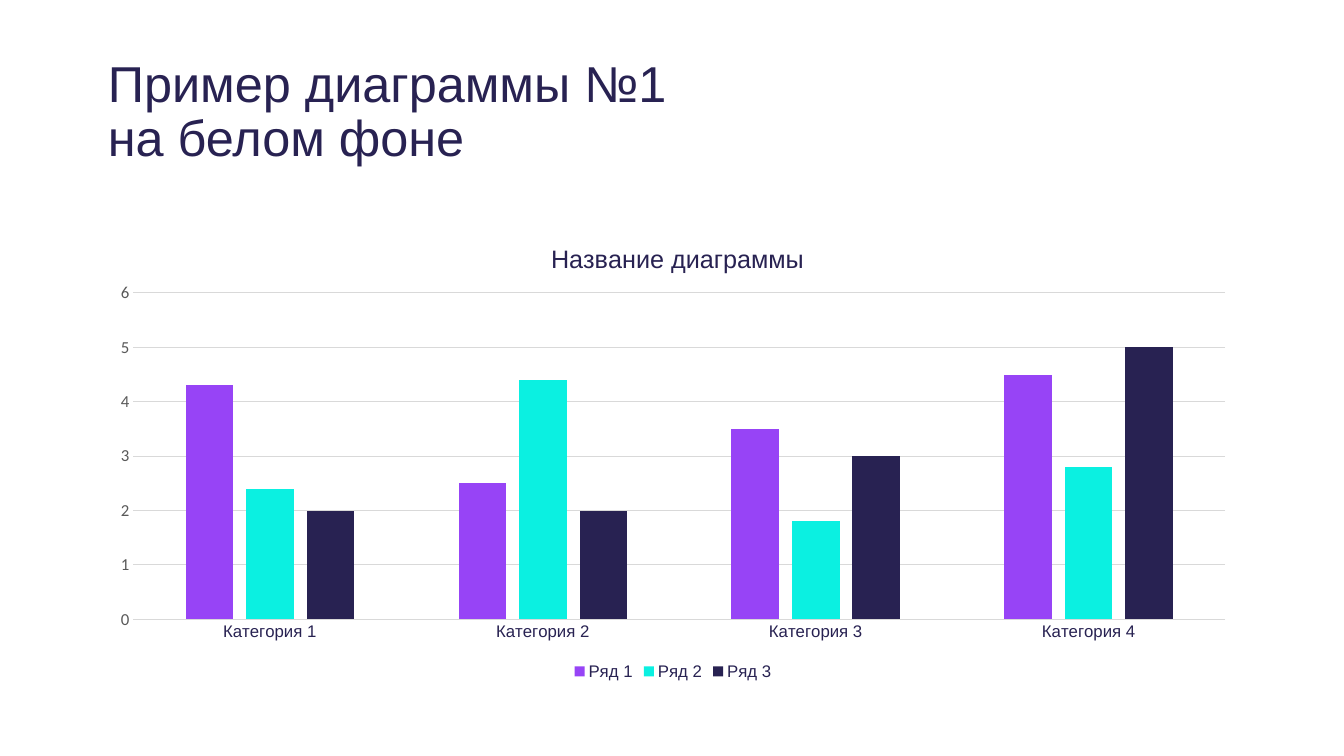
from lxml.etree import SubElement
from pptx import Presentation
from pptx.chart.data import CategoryChartData
from pptx.dml.color import RGBColor
from pptx.enum.chart import XL_CHART_TYPE as ChartType, XL_LEGEND_POSITION as LegendPosition
from pptx.enum.chart import XL_TICK_MARK as TickMark
from pptx.enum.text import MSO_ANCHOR as Anchor, PP_ALIGN as Align
from pptx.oxml.ns import qn
from pptx.util import Inches, Pt

TITLE = "Пример диаграммы №1\nна белом фоне"
CHART_TITLE = "Название диаграммы"
CATEGORIES = ["Категория 1", "Категория 2", "Категория 3", "Категория 4"]
SERIES = [
    ("Ряд 1", (4.3, 2.5, 3.5, 4.5), "9744F6"),
    ("Ряд 2", (2.4, 4.4, 1.8, 2.8), "0BF0E1"),
    ("Ряд 3", (2, 2, 3, 5), "282252"),
]
INK, GREY, RULE = "282252", "595959", "D9D9D9"
LEFT, WIDTH = 0.97, 11.41
TITLE_BOX = (LEFT, 0.4, WIDTH, 1.45)
CHART_BOX = (LEFT, 2.15, WIDTH, 4.64)
TITLE_PLACE = {"x": 0.39, "y": 0.045}
PLOT_PLACE = {"x": 0.031, "y": 0.163, "w": 0.949, "h": 0.698}


def color(value):
    return RGBColor.from_string(value)


def set_all(target, values):
    for name, value in values.items():
        setattr(target, name, value)


def set_font(font, size, ink=INK, name="Arial"):
    set_all(font, {"size": Pt(size), "name": name, "bold": False})
    font.color.rgb = color(ink)


def set_line(line, ink):
    line.width = Pt(0.75)
    line.color.rgb = color(ink)


def place(parent, index, fractions, inner=False):
    for old in parent.findall(qn("c:layout")):
        parent.remove(old)
    layout = SubElement(parent, qn("c:layout"))
    parent.insert(index, layout)
    manual = SubElement(layout, qn("c:manualLayout"))
    if inner:
        SubElement(manual, qn("c:layoutTarget")).set("val", "inner")
    for side in ("x", "y"):
        SubElement(manual, qn(f"c:{side}Mode")).set("val", "edge")
    for side, fraction in fractions.items():
        SubElement(manual, qn(f"c:{side}")).set("val", str(fraction))


def add_title(page):
    box = page.shapes.title
    sides = map(Inches, TITLE_BOX)
    set_all(box, dict(zip(("left", "top", "width", "height"), sides)))
    set_all(box.text_frame, {"vertical_anchor": Anchor.MIDDLE, "word_wrap": True})
    para = box.text_frame.paragraphs[0]
    para.text = TITLE
    set_all(para, {"alignment": Align.LEFT, "line_spacing": 0.9})
    for span in para.runs:
        set_font(span.font, 36)


def add_columns(page):
    data = CategoryChartData()
    data.categories = CATEGORIES
    for name, values, _ in SERIES:
        data.add_series(name, values)
    frame = page.shapes.add_chart(
        ChartType.COLUMN_CLUSTERED, *map(Inches, CHART_BOX), data
    )
    chart = frame.chart
    set_font(chart.font, 10, "000000", "Calibri")

    chart.has_title = True
    heading = chart.chart_title
    heading.include_in_layout = False
    para = heading.text_frame.paragraphs[0]
    para.text = CHART_TITLE
    set_font(para.runs[0].font, 18)
    place(heading._element, 1, TITLE_PLACE)

    plot = chart.plots[0]
    set_all(plot, {"gap_width": 219, "overlap": -27, "vary_by_categories": False})
    for series, (_, _, fill) in zip(plot.series, SERIES):
        series.format.fill.solid()
        series.format.fill.fore_color.rgb = color(fill)
    place(chart._chartSpace.chart.plotArea, 0, PLOT_PLACE, inner=True)

    across, up = chart.category_axis, chart.value_axis
    for axis in (across, up):
        set_all(axis, {"major_tick_mark": TickMark.NONE, "minor_tick_mark": TickMark.NONE})
    set_font(across.tick_labels.font, 12)
    set_line(across.format.line, RULE)
    set_font(up.tick_labels.font, 12, GREY, "Calibri")
    up.format.line.fill.background()
    set_all(up, {"minimum_scale": 0, "maximum_scale": 6, "major_unit": 1})
    up.has_major_gridlines = True
    set_line(up.major_gridlines.format.line, RULE)

    chart.has_legend = True
    set_all(chart.legend, {"position": LegendPosition.BOTTOM, "include_in_layout": False})
    set_font(chart.legend.font, 12)


def main():
    deck = Presentation()
    set_all(deck, {"slide_width": Inches(13.33), "slide_height": Inches(7.5)})
    page = deck.slides.add_slide(deck.slide_layouts[5])
    add_title(page)
    add_columns(page)
    deck.save("out.pptx")


if __name__ == "__main__":
    main()
